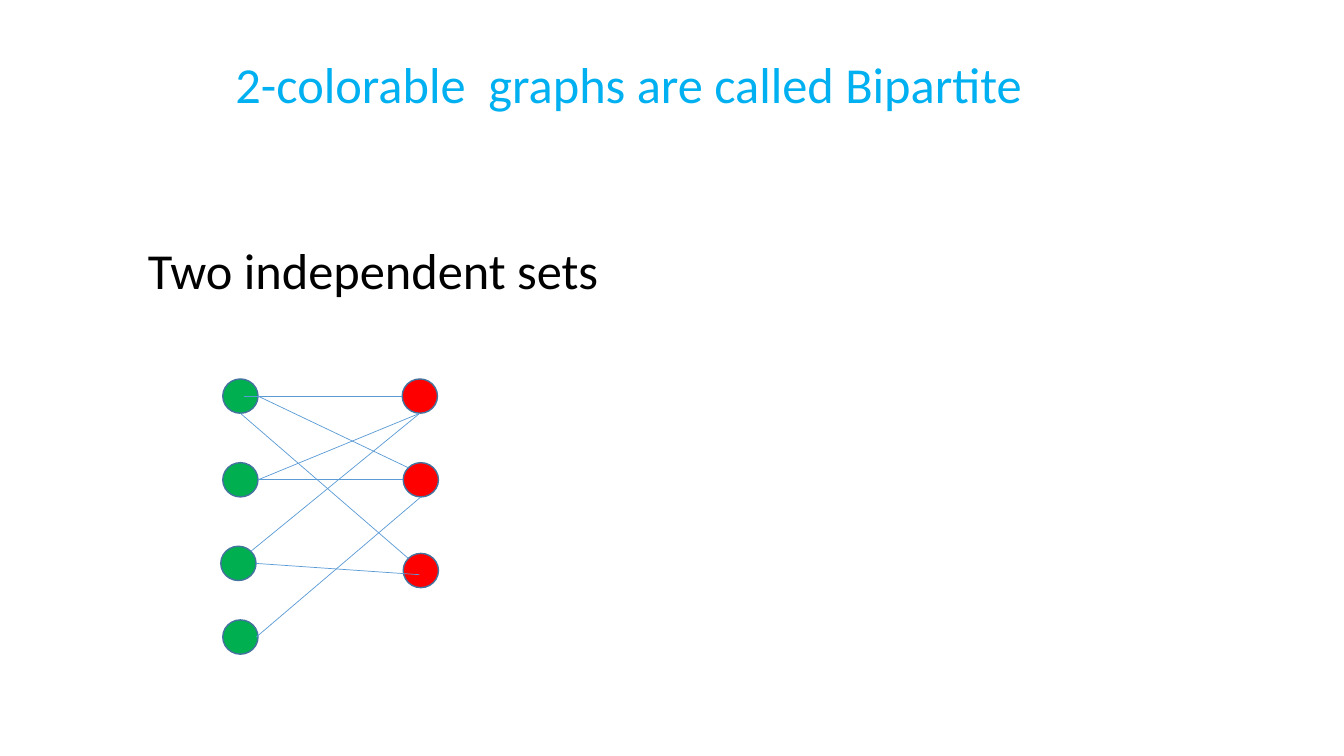
from dataclasses import dataclass

from lxml import etree
from pptx import Presentation
from pptx import util as u
from pptx.dml.color import RGBColor
from pptx.enum import shapes, text
from pptx.oxml.ns import qn
from pptx.slide import Slide


@dataclass(frozen=True)
class Theme:
    font: str = "Calibri"
    text_size: float = 36
    heading: str = "00B0F0"
    body: str = "000000"
    green: str = "00B050"
    red: str = "FF0000"
    outline: str = "43739E"
    outline_width: float = 1
    edge: str = "5B9BD5"
    edge_width: float = 0.5


@dataclass(frozen=True)
class Caption:
    wording: str
    left: float
    top: float
    width: float
    height: float
    color: str
    align: text.PP_ALIGN
    anchor: text.MSO_ANCHOR
    space_before: float = 0


@dataclass(frozen=True)
class Vertex:
    left: float
    top: float
    color: str


@dataclass(frozen=True)
class Site:
    """Place on a vertex, as fractions of its width and height."""
    across: float
    down: float


@dataclass(frozen=True)
class Edge:
    green: int
    green_site: Site
    red: int
    red_site: Site


THEME = Theme()
VERTEX_WIDTH, VERTEX_HEIGHT = 25.2, 24.5

CAPTIONS = [
    Caption("Two independent sets", 98.6, 117.4, 720, 100.8, THEME.body,
            text.PP_ALIGN.LEFT, text.MSO_ANCHOR.BOTTOM),
    Caption("2-colorable  graphs are called Bipartite", 89.3, 39.6, 720, 49,
            THEME.heading, text.PP_ALIGN.CENTER, text.MSO_ANCHOR.TOP, 10),
]

# The two independent sets of vertices, each from top to bottom
GREEN_SET = [Vertex(left, top, THEME.green) for left, top in
             [(159.1, 270.7), (159.1, 330.5), (157.7, 390.2), (159.1, 442.8)]]
RED_SET = [Vertex(left, top, THEME.red) for left, top in
           [(287.3, 270.7), (288, 330.5), (288, 395.3)]]

LEFT, RIGHT, BOTTOM = Site(0, 0.5), Site(1, 0.5), Site(0.5, 1)
UPPER_LEFT, UPPER_RIGHT = Site(0.15, 0.15), Site(0.85, 0.15)

EDGES = [
    Edge(0, Site(0.6, 0.5), 0, LEFT),
    Edge(0, RIGHT, 1, UPPER_LEFT),
    Edge(0, BOTTOM, 2, UPPER_LEFT),
    Edge(1, RIGHT, 0, BOTTOM),
    Edge(1, RIGHT, 1, LEFT),
    Edge(2, UPPER_RIGHT, 0, BOTTOM),
    Edge(2, RIGHT, 2, Site(0.46, 0.62)),
    Edge(3, Site(0.95, 0.5), 1, BOTTOM),
]


def draw_caption(slide: Slide, caption: Caption) -> None:
    box = slide.shapes.add_textbox(u.Pt(caption.left), u.Pt(caption.top),
                                   u.Pt(caption.width), u.Pt(caption.height))
    frame = box.text_frame
    frame.word_wrap = True
    frame.vertical_anchor = caption.anchor
    paragraph = frame.paragraphs[0]
    paragraph.text = caption.wording
    paragraph.alignment = caption.align
    paragraph.line_spacing = 0.9
    paragraph.space_before = u.Pt(caption.space_before)
    paragraph.font.name = THEME.font
    paragraph.font.size = u.Pt(THEME.text_size)
    paragraph.font.color.rgb = RGBColor.from_string(caption.color)


def draw_vertex(slide: Slide, vertex: Vertex) -> None:
    disc = slide.shapes.add_shape(shapes.MSO_SHAPE.OVAL,
                                  u.Pt(vertex.left), u.Pt(vertex.top),
                                  u.Pt(VERTEX_WIDTH), u.Pt(VERTEX_HEIGHT))
    disc.shadow.inherit = False
    disc.fill.solid()
    disc.fill.fore_color.rgb = RGBColor.from_string(vertex.color)
    disc.line.color.rgb = RGBColor.from_string(THEME.outline)
    disc.line.width = u.Pt(THEME.outline_width)


def locate(vertex: Vertex, site: Site) -> tuple[u.Length, u.Length]:
    return (u.Pt(vertex.left + site.across * VERTEX_WIDTH),
            u.Pt(vertex.top + site.down * VERTEX_HEIGHT))


def draw_edge(slide: Slide, edge: Edge) -> None:
    start = locate(GREEN_SET[edge.green], edge.green_site)
    end = locate(RED_SET[edge.red], edge.red_site)
    link = slide.shapes.add_connector(shapes.MSO_CONNECTOR.STRAIGHT, *start, *end)
    link.line.color.rgb = RGBColor.from_string(THEME.edge)
    link.line.width = u.Pt(THEME.edge_width)
    etree.SubElement(link._element.spPr, qn("a:effectLst"))


def main() -> None:
    deck = Presentation()
    deck.slide_width, deck.slide_height = u.Pt(960), u.Pt(540)
    slide = deck.slides.add_slide(deck.slide_layouts[6])

    # Heading and statement
    for caption in CAPTIONS:
        draw_caption(slide, caption)

    # Bipartite graph, with the edges over the vertices
    for vertex in GREEN_SET + RED_SET:
        draw_vertex(slide, vertex)
    for edge in EDGES:
        draw_edge(slide, edge)

    deck.save("out.pptx")


if __name__ == "__main__":
    main()
